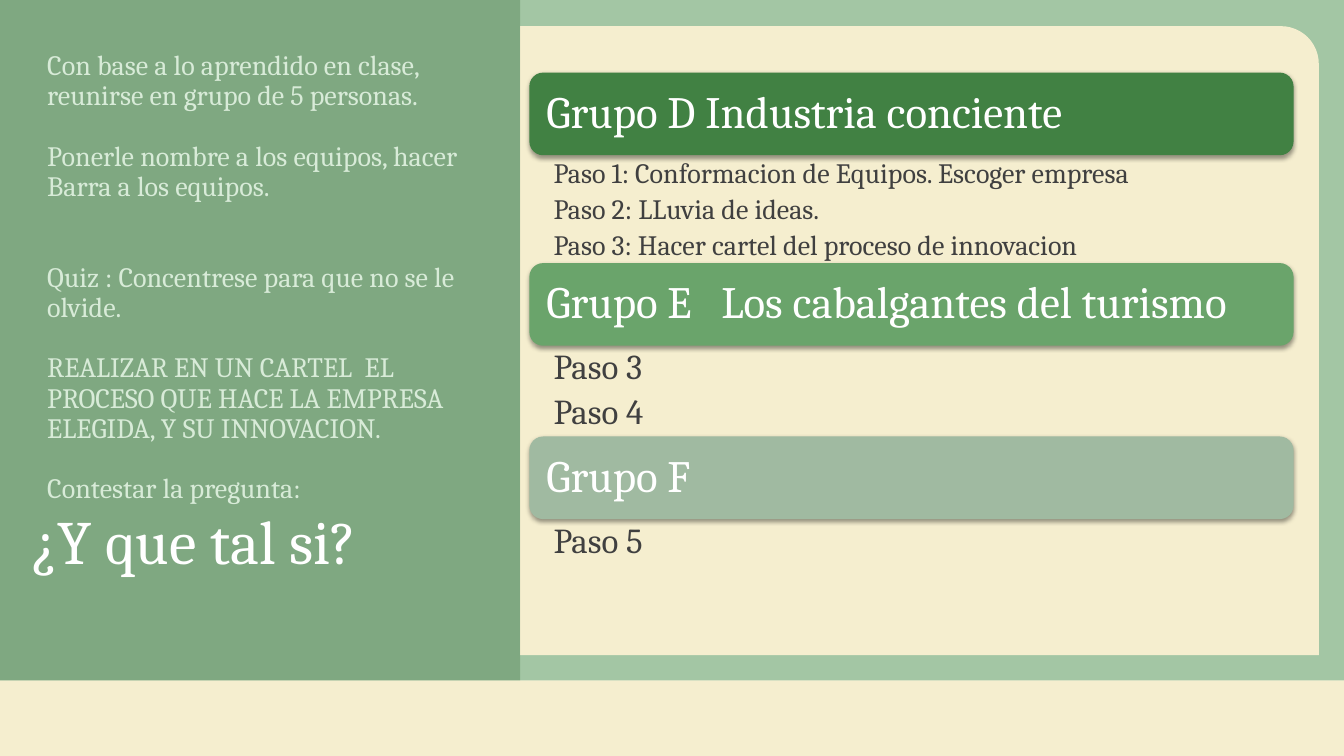
from lxml import etree
from pptx import Presentation
from pptx import util as u
from pptx.dml.color import RGBColor
from pptx.enum import shapes, text
from pptx.oxml import ns

WIDTH, HEIGHT = 13.33, 7.5
SIDEBAR_WIDTH, BAND_HEIGHT = 5.16, 6.75
GROUP_LEFT, GROUP_TOP, GROUP_WIDTH, HEADING_HEIGHT = 5.25, 0.72, 7.58, 0.82
FONT = "Cambria"
LINE_SPACING = 0.9
LINE_GAP = 21.6  # points taken by one line of instructions
COLORS = {
    "cream": "F5EECF", "band": "488E4A", "sidebar": "366A38",
    "white": "FFFFFF", "instructions": "D8EBD8", "steps": "404040",
    "group_d": "418143", "group_e": "6AA46B", "group_f": "A0BAA1",
}
# Each instruction with the number of empty lines above it
INSTRUCTIONS = [
    ("Con base a lo aprendido en clase, reunirse en grupo de 5 personas.", 0),
    ("Ponerle nombre a los equipos, hacer Barra a los equipos.", 1),
    ("Quiz : Concentrese para que no se le olvide.", 2),
    ("REALIZAR EN UN CARTEL  EL PROCESO QUE HACE LA EMPRESA ELEGIDA, "
     "Y SU INNOVACION.", 1),
    ("Contestar la pregunta:", 1),
]
# Heading, colour, steps, step size, height of the steps
GROUPS = [
    ("Grupo D Industria conciente", "group_d",
     ["Paso 1: Conformacion de Equipos. Escoger empresa",
      "Paso 2: LLuvia de ideas.",
      "Paso 3: Hacer cartel del proceso de innovacion"], 20, 1.07),
    ("Grupo E   Los cabalgantes del turismo", "group_e",
     ["Paso 3", "Paso 4"], 25, 0.9),
    ("Grupo F", "group_f", ["Paso 5"], 25, 0.58),
]


def inches(*lengths):
    return [u.Inches(length) for length in lengths]


def add_panel(slide, preset, box, color, alpha=None):
    panel = slide.shapes.add_shape(preset, *inches(*box))
    panel.shadow.inherit = False
    panel.fill.solid()
    panel.fill.fore_color.rgb = RGBColor.from_string(COLORS[color])
    panel.line.fill.background()
    if alpha:
        tint = panel.fill._xPr.find(".//" + ns.qn("a:srgbClr"))
        etree.SubElement(tint, ns.qn("a:alpha"), val=str(alpha * 1000))
    return panel


def add_drop_shadow(panel):
    effects = panel._element.spPr.find(ns.qn("a:effectLst"))
    shadow = etree.SubElement(effects, ns.qn("a:outerShdw"), dist=str(u.Pt(1.8)),
                              blurRad=str(u.Pt(3.1)), dir="5400000", rotWithShape="0")
    black = etree.SubElement(shadow, ns.qn("a:srgbClr"), val="000000")
    etree.SubElement(black, ns.qn("a:alpha"), val="40000")


def write(shape, lines, size, color, anchor=text.MSO_ANCHOR.TOP,
          insets=(0.1, 0.05, 0.1, 0.05), space_after=0):
    """Fill a shape with (wording, points above) lines."""
    frame = shape.text_frame
    left, top, right, bottom = inches(*insets)
    frame_format = {
        "word_wrap": True, "auto_size": text.MSO_AUTO_SIZE.NONE,
        "vertical_anchor": anchor, "margin_left": left, "margin_top": top,
        "margin_right": right, "margin_bottom": bottom,
    }
    for name, value in frame_format.items():
        setattr(frame, name, value)
    for index, (wording, above) in enumerate(lines):
        paragraph = frame.add_paragraph() if index else frame.paragraphs[0]
        paragraph_format = {
            "text": wording, "alignment": text.PP_ALIGN.LEFT,
            "line_spacing": LINE_SPACING, "space_before": u.Pt(above),
            "space_after": u.Pt(space_after),
        }
        for name, value in paragraph_format.items():
            setattr(paragraph, name, value)
        font = paragraph.runs[0].font
        font.name, font.size = FONT, u.Pt(size)
        font.color.rgb = RGBColor.from_string(COLORS[color])


def add_backdrop(slide):
    rect = shapes.MSO_SHAPE.RECTANGLE
    add_panel(slide, rect, (0, BAND_HEIGHT, WIDTH, HEIGHT - BAND_HEIGHT), "cream")
    add_panel(slide, rect, (0, 0, WIDTH, BAND_HEIGHT), "band", alpha=50)
    content = add_panel(slide, shapes.MSO_SHAPE.ROUND_1_RECTANGLE,
                        (SIDEBAR_WIDTH, 0.26, 7.92, 6.24), "cream")
    content.adjustments[0] = 0.06
    add_panel(slide, rect, (0, 0, SIDEBAR_WIDTH, BAND_HEIGHT), "sidebar", alpha=32)


def place_title(slide):
    question = slide.shapes.title
    question.left, question.top, question.width, question.height = inches(
        0.21, 4.9, 4.27, 0.88)
    write(question, [("¿Y que tal si?", 0)], 44, "white", text.MSO_ANCHOR.BOTTOM)
    slide.shapes._spTree.append(question._element)  # in front of the backdrop


def add_instructions(slide):
    box = slide.shapes.add_textbox(*inches(0.37, 0.46, 4.49, 6.29))
    lines = [(wording, gaps * LINE_GAP) for wording, gaps in INSTRUCTIONS]
    write(box, lines, 20, "instructions")


def add_group(slide, top, heading, color, steps, size, steps_height):
    """Draw a heading bar with its steps and return the bottom edge."""
    bar = add_panel(slide, shapes.MSO_SHAPE.ROUNDED_RECTANGLE,
                    (GROUP_LEFT, top, GROUP_WIDTH, HEADING_HEIGHT), color)
    add_drop_shadow(bar)
    write(bar, [(heading, 0)], 32, "white", text.MSO_ANCHOR.MIDDLE,
          insets=(0.13, 0.13, 0.13, 0.13))
    steps_top = top + HEADING_HEIGHT
    box = slide.shapes.add_textbox(
        *inches(GROUP_LEFT, steps_top, GROUP_WIDTH, steps_height))
    write(box, [(step, 0) for step in steps], size, "steps",
          insets=(0.24, 0.04, 0.2, 0.04), space_after=size * 0.2)
    return steps_top + steps_height


def main():
    deck = Presentation()
    deck.slide_width, deck.slide_height = inches(WIDTH, HEIGHT)
    slide = deck.slides.add_slide(deck.slide_layouts.get_by_name("Title Only"))
    add_backdrop(slide)
    place_title(slide)
    add_instructions(slide)
    top = GROUP_TOP
    for group in GROUPS:
        top = add_group(slide, top, *group)
    deck.save("out.pptx")


if __name__ == "__main__":
    main()
